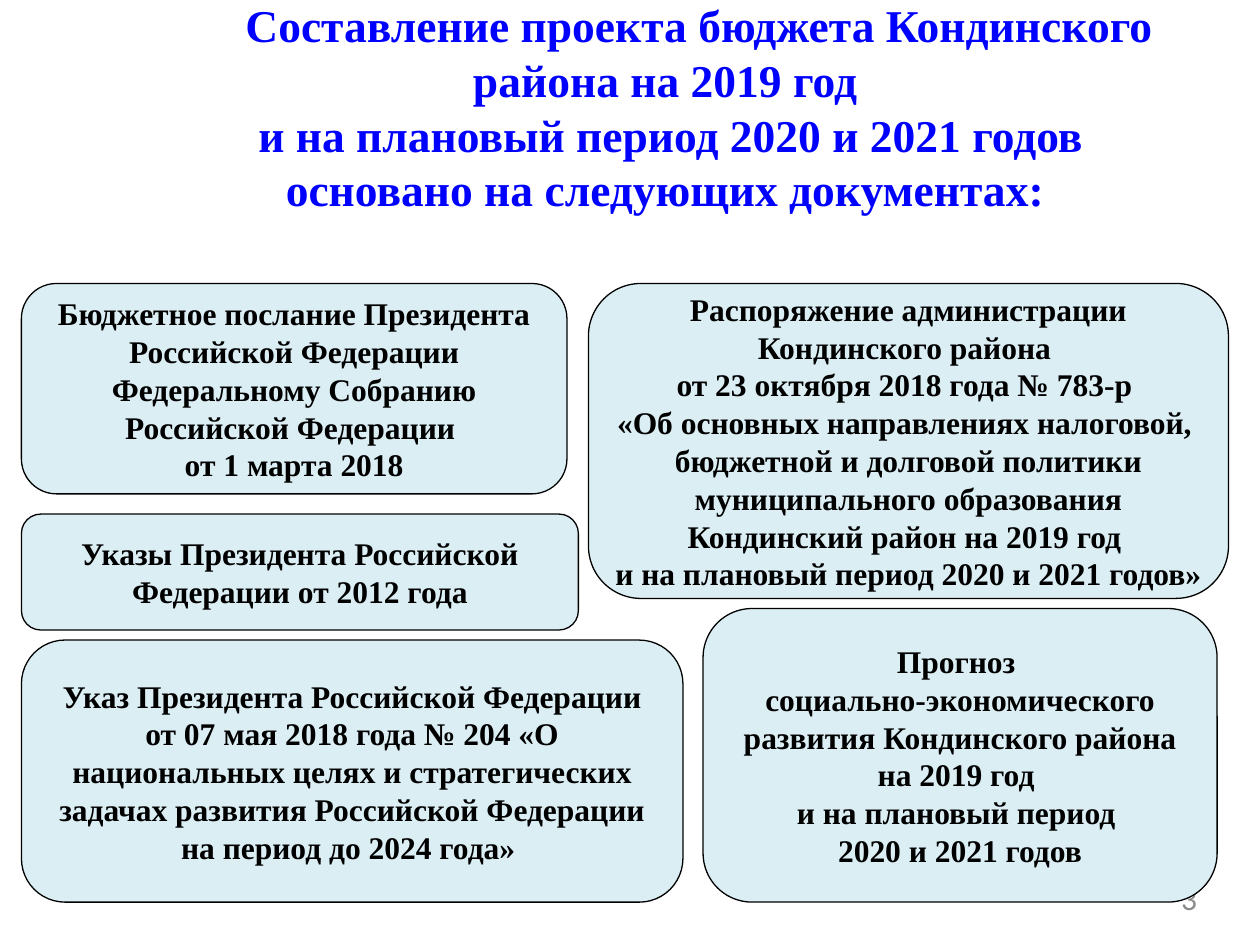
from pptx import Presentation
from pptx.dml.color import RGBColor
from pptx.enum.shapes import MSO_SHAPE
from pptx.enum.text import MSO_ANCHOR, PP_ALIGN
from pptx.util import Inches, Pt


def color(value):
    return RGBColor.from_string(value)


def add_line(frame, index, text, size, fill, name="Times New Roman", bold=True,
             align=PP_ALIGN.CENTER):
    para = frame.paragraphs[0] if index == 0 else frame.add_paragraph()
    para.alignment = align
    span = para.add_run()
    span.text = text
    span.font.name = name
    span.font.size = Pt(size)
    span.font.bold = bold
    span.font.color.rgb = color(fill)
    return para


deck = Presentation()
deck.slide_width, deck.slide_height = Inches(10), Inches(7.5)
page = deck.slides.add_slide(deck.slide_layouts[6])

# Title and page number
frames = []
for left, top, width, height in [(0.92, -0.02, 8.72, 1.75), (7.2, 6.98, 2.3, 0.38)]:
    box = page.shapes.add_textbox(Inches(left), Inches(top), Inches(width), Inches(height))
    frame = box.text_frame
    frame.word_wrap = True
    frame.margin_left = frame.margin_right = frame.margin_top = frame.margin_bottom = 0
    frames.append(frame)
title, number = frames

title_lines = [
    ("Составление проекта бюджета Кондинского района на 2019 год", 0.54),
    ("и на плановый период 2020 и 2021 годов", 0.09),
    ("основано на следующих документах:", 0),
]
for index, (text, indent) in enumerate(title_lines):
    para = add_line(title, index, text, 26, "0000FF")
    para._p.get_or_add_pPr().set("indent", str(Inches(indent)))
add_line(number, 0, "3", 18, "8C8C8C", "Calibri", False, PP_ALIGN.RIGHT)

# Document cards: left, top, width, height, wrap, paragraphs
cards = [
    (0.17, 2.25, 4.33, 1.67, True, [
        "Бюджетное послание Президента Российской Федерации "
        "Федеральному Собранию Российской Федерации ",
        "от 1 марта 2018"]),
    (5.58, 4.83, 4.08, 2.33, False, [
        "Прогноз ",
        "социально-экономического",
        "развития Кондинского района",
        "на 2019 год ",
        "и на плановый период ",
        "2020 и 2021 годов"]),
    (4.67, 2.25, 5.08, 2.5, False, [
        "Распоряжение администрации",
        "Кондинского района ",
        "от 23 октября 2018 года № 783-р ",
        "«Об основных направлениях налоговой, ",
        "бюджетной и долговой политики",
        "муниципального образования",
        "Кондинский район на 2019 год ",
        "и на плановый период 2020 и 2021 годов»"]),
    (0.17, 5.08, 5.25, 2.08, True, [
        "Указ Президента Российской Федерации от 07 мая 2018 года № 204 "
        "«О национальных целях и стратегических задачах развития "
        "Российской Федерации на период до 2024 года» "]),
    (0.17, 4.08, 4.42, 0.92, True, [
        "Указы Президента Российской Федерации от 2012 года"]),
]
for left, top, width, height, wrap, lines in cards:
    card = page.shapes.add_shape(MSO_SHAPE.FLOWCHART_ALTERNATE_PROCESS, Inches(left),
                                 Inches(top), Inches(width), Inches(height))
    card.shadow.inherit = False
    card.fill.solid()
    card.fill.fore_color.rgb = color("DBEEF4")
    card.line.color.rgb = color("000000")
    card.line.width = Pt(0.75)
    frame = card.text_frame
    frame.word_wrap = wrap
    frame.vertical_anchor = MSO_ANCHOR.MIDDLE
    for index, text in enumerate(lines):
        add_line(frame, index, text, 18, "000000")

deck.save("out.pptx")
